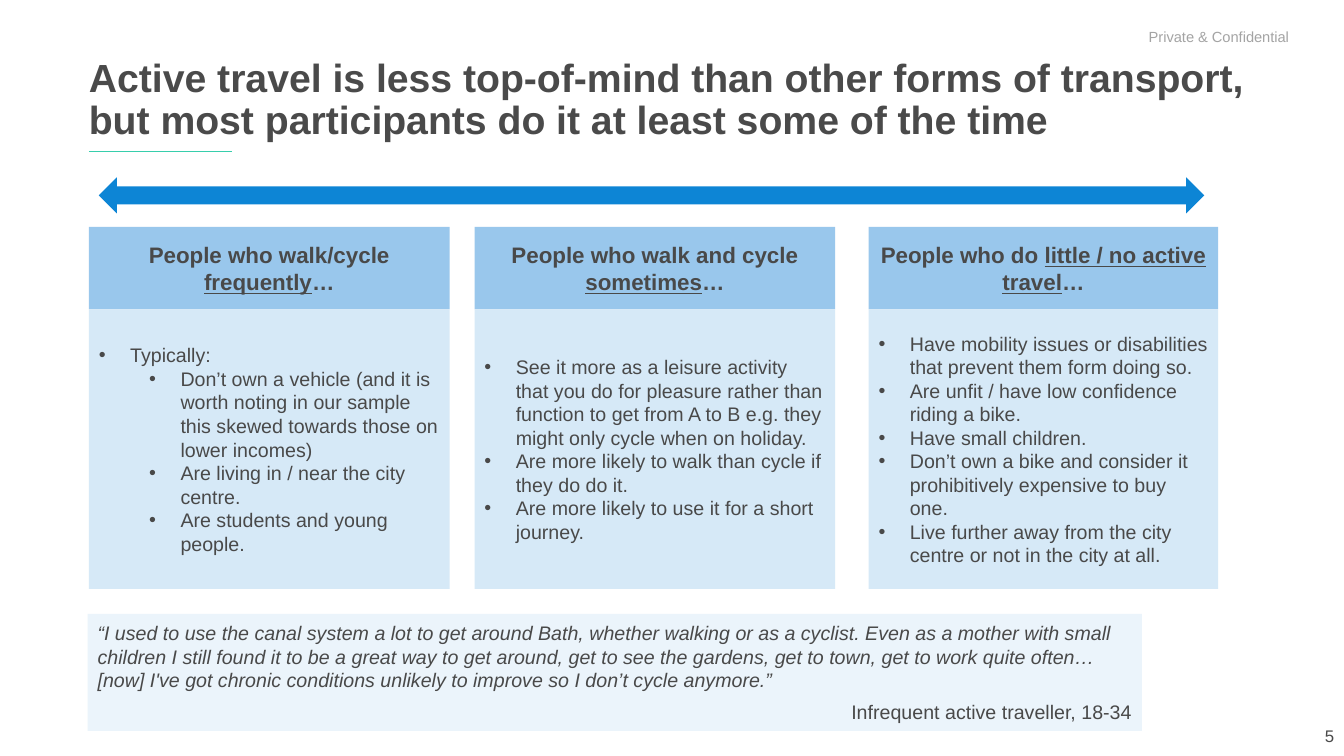
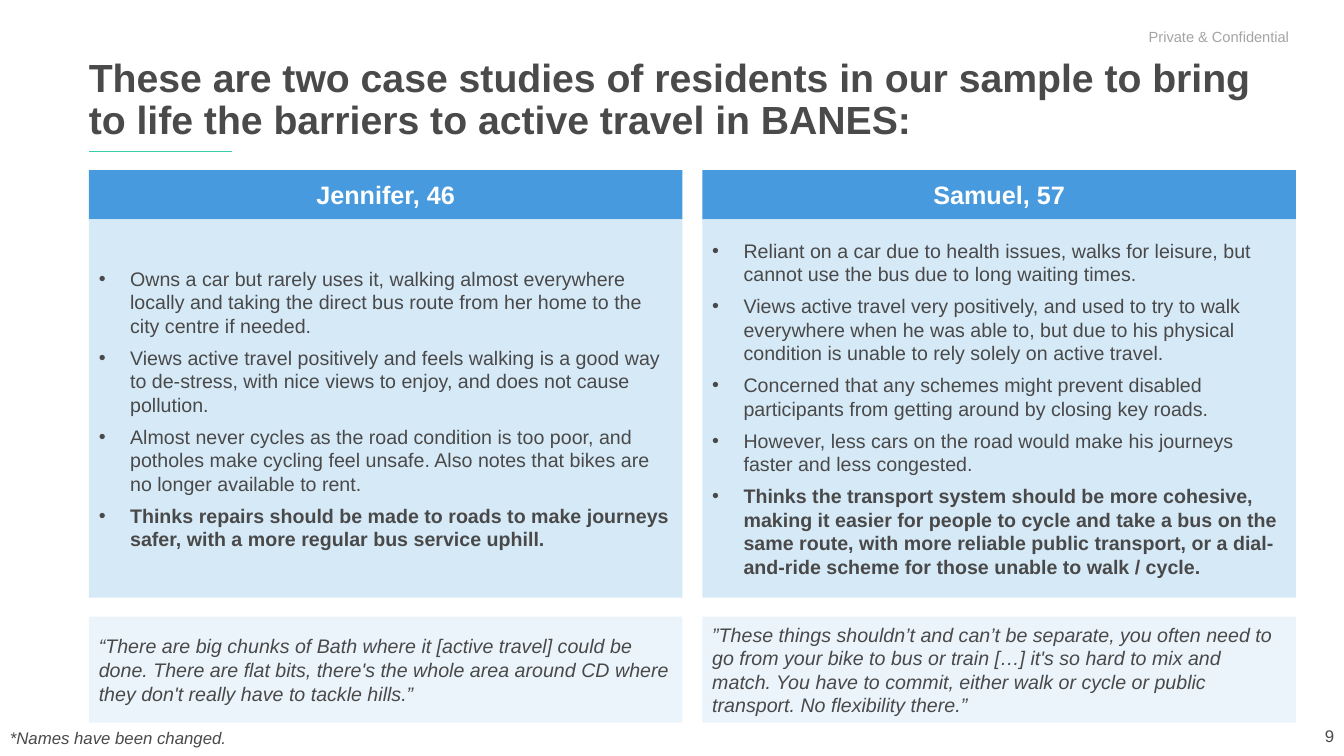
from dataclasses import dataclass

from lxml.etree import SubElement
from pptx import Presentation
from pptx.dml.color import RGBColor
from pptx.enum.shapes import MSO_CONNECTOR, MSO_SHAPE as Preset
from pptx.enum.text import MSO_ANCHOR as Anchor, PP_ALIGN as Align
from pptx.oxml.ns import qn
from pptx.util import Cm, Pt

# Shared style
FONT = "Arial"
WHITE = RGBColor(0xFF, 0xFF, 0xFF)
TITLE_GREY = RGBColor(0x4A, 0x4A, 0x4A)
TEXT_GREY = RGBColor(0x49, 0x49, 0x49)
PALE_GREY = RGBColor(0xA4, 0xA4, 0xA4)
GREEN = RGBColor(0x37, 0xCE, 0xAC)
ARROW_BLUE = RGBColor(0x0D, 0x85, 0xD5)
GROUP_BLUE = RGBColor(0x99, 0xC7, 0xEC)
CASE_BLUE = RGBColor(0x47, 0x9A, 0xDD)
BODY_BLUE = RGBColor(0xD6, 0xE9, 0xF7)
QUOTE_BLUE = RGBColor(0xEB, 0xF4, 0xFB)
MARGIN = 2.24
BULLET_HANG = 0.79
LEVEL_STEP = 1.27


@dataclass
class Box:
    """Place and size in centimetres."""
    left: float
    top: float
    width: float
    height: float

    def lengths(self) -> tuple:
        return Cm(self.left), Cm(self.top), Cm(self.width), Cm(self.height)


@dataclass
class Line:
    """One paragraph; text may continue with an underlined part and a tail."""
    text: str
    underlined: str = ""
    tail: str = ""
    size: float = 14
    color: RGBColor = TEXT_GREY
    bold: bool = False
    italic: bool = False
    align: Align = Align.LEFT
    bullet: bool = False
    level: int = 0
    before: float = 0
    after: float = 0
    spacing: float = 1.0


@dataclass
class Group:
    """A kind of traveller: header wording and bullets."""
    left: float
    width: float
    lead: str
    frequency: str
    points: list[Line]


@dataclass
class CaseStudy:
    """A resident: name, habits, a closing wish and a quote."""
    name: str
    habits: list[str]
    wish: str
    quote: str


def add_bullet(paragraph, level: int) -> None:
    props = paragraph._p.get_or_add_pPr()
    props.set("marL", str(Cm(BULLET_HANG + level * LEVEL_STEP)))
    props.set("indent", str(-Cm(BULLET_HANG)))
    SubElement(props, qn("a:buFont"), typeface=FONT)
    SubElement(props, qn("a:buChar"), char="•")


def write(frame, lines: list[Line], anchor: Anchor = Anchor.MIDDLE, wrap: bool = True) -> None:
    frame.word_wrap = wrap
    frame.vertical_anchor = anchor
    for index, line in enumerate(lines):
        paragraph = frame.add_paragraph() if index else frame.paragraphs[0]
        paragraph.alignment = line.align
        paragraph.level = line.level
        if line.bullet:
            add_bullet(paragraph, line.level)
        if index and line.before:
            paragraph.space_before = Pt(line.before)
        if line.after:
            paragraph.space_after = Pt(line.after)
        if line.spacing != 1:
            paragraph.line_spacing = line.spacing
        font = paragraph.font
        font.name, font.size = FONT, Pt(line.size)
        font.bold, font.italic = line.bold, line.italic
        font.color.rgb = line.color
        paragraph.add_run().text = line.text
        if line.underlined:
            stressed = paragraph.add_run()
            stressed.text = line.underlined
            stressed.font.underline = True
        if line.tail:
            paragraph.add_run().text = line.tail


def add_panel(slide, box: Box, fill: RGBColor, lines: list[Line], preset: Preset = Preset.RECTANGLE) -> None:
    panel = slide.shapes.add_shape(preset, *box.lengths())
    panel.shadow.inherit = False
    panel.fill.solid()
    panel.fill.fore_color.rgb = fill
    panel.line.fill.background()
    if lines:
        write(panel.text_frame, lines)


def add_label(slide, box: Box, line: Line, anchor: Anchor = Anchor.TOP, wrap: bool = True):
    frame = slide.shapes.add_textbox(*box.lengths()).text_frame
    write(frame, [line], anchor, wrap)
    return frame


def add_base_slide(deck, title: str, number: str):
    """Blank slide with page number, confidentiality mark, rule and title."""
    slide = deck.slides.add_slide(deck.slide_layouts[6])
    add_label(slide, Box(26.25, 18.03, 7.62, 1.02),
              Line(number, size=12, color=TITLE_GREY, align=Align.RIGHT), Anchor.MIDDLE)
    add_panel(slide, Box(28.7, 0.48, 4.14, 0.89), WHITE,
              [Line("Private & Confidential", size=10.5, color=PALE_GREY)])
    rule = slide.shapes.add_connector(MSO_CONNECTOR.STRAIGHT, Cm(MARGIN), Cm(3.81), Cm(5.84), Cm(3.81))
    rule.line.color.rgb = GREEN
    rule.line.width = Pt(1)
    SubElement(rule._element.spPr, qn("a:effectLst"))
    heading = add_label(slide, Box(MARGIN, 1.35, 29.72, 2.21),
                        Line(title, size=28, color=TITLE_GREY, bold=True, spacing=0.9))
    heading.margin_left = 0
    return slide


# Content
def point(text: str, level: int = 0) -> Line:
    return Line(text, bullet=True, level=level)


GROUPS = [
    Group(MARGIN, 9.09, "People who walk/cycle ", "frequently", [
        point("Typically:"),
        point("Don’t own a vehicle (and it is worth noting in our sample this skewed "
              "towards those on lower incomes)", 1),
        point("Are living in / near the city centre.", 1),
        point("Are students and young people.", 1),
    ]),
    Group(11.96, 9.09, "People who walk and cycle ", "sometimes", [
        point("See it more as a leisure activity that you do for pleasure rather than function "
              "to get from A to B e.g. they might only cycle when on holiday."),
        point("Are more likely to walk than cycle if they do do it."),
        point("Are more likely to use it for a short journey."),
    ]),
    Group(21.89, 8.81, "People who do ", "little / no active travel", [
        point("Have mobility issues or disabilities that prevent them form doing so."),
        point("Are unfit / have low confidence riding a bike."),
        point("Have small children."),
        point("Don’t own a bike and consider it prohibitively expensive to buy one."),
        point("Live further away from the city centre or not in the city at all."),
    ]),
]

CASE_STUDIES = [
    CaseStudy(
        "Jennifer, 46",
        ["Owns a car but rarely uses it, walking almost everywhere locally and taking the direct "
         "bus route from her home to the city centre if needed.",
         "Views active travel positively and feels walking is a good way to de-stress, with nice "
         "views to enjoy, and does not cause pollution.",
         "Almost never cycles as the road condition is too poor, and potholes make cycling feel "
         "unsafe. Also notes that bikes are no longer available to rent."],
        "Thinks repairs should be made to roads to make journeys safer, with a more regular bus "
        "service uphill.",
        "“There are big chunks of Bath where it [active travel] could be done. There are flat bits, "
        "there's the whole area around CD where they don't really have to tackle hills.”"),
    CaseStudy(
        "Samuel, 57",
        ["Reliant on a car due to health issues, walks for leisure, but cannot use the bus due to "
         "long waiting times.",
         "Views active travel very positively, and used to try to walk everywhere when he was able "
         "to, but due to his physical condition is unable to rely solely on active travel.",
         "Concerned that any schemes might prevent disabled participants from getting around by "
         "closing key roads.",
         "However, less cars on the road would make his journeys faster and less congested."],
        "Thinks the transport system should be more cohesive, making it easier for people to cycle "
        "and take a bus on the same route, with more reliable public transport, or a dial-and-ride "
        "scheme for those unable to walk / cycle.",
        "”These things shouldn’t and can’t be separate, you often need to go from your bike to bus "
        "or train […] it's so hard to mix and match. You have to commit, either walk or cycle or "
        "public transport. No flexibility there.”"),
]


def build_groups_slide(deck) -> None:
    slide = add_base_slide(deck, "Active travel is less top-of-mind than other forms of transport, "
                                 "but most participants do it at least some of the time", "5")
    add_panel(slide, Box(2.49, 4.47, 27.86, 0.91), ARROW_BLUE, [], Preset.LEFT_RIGHT_ARROW)

    # Columns from frequent to rare travellers
    for group in GROUPS:
        header = Line(group.lead, group.frequency, "…", size=16, bold=True, align=Align.CENTER)
        add_panel(slide, Box(group.left, 5.72, group.width, 2.08), GROUP_BLUE, [header])
        add_panel(slide, Box(group.left, 7.8, group.width, 7.04), BODY_BLUE, group.points)

    # Quote and speaker
    add_panel(slide, Box(2.21, 15.47, 26.57, 2.95), QUOTE_BLUE, [
        Line("“I used to use the canal system a lot to get around Bath, whether walking or as a "
             "cyclist. Even as a mother with small children I still found it to be a great way to "
             "get around, get to see the gardens, get to town, get to work quite often… [now] I've "
             "got chronic conditions unlikely to improve so I don’t cycle anymore.”",
             italic=True, after=6),
        Line("Infrequent active traveller, 18-34", align=Align.RIGHT),
    ])


def build_cases_slide(deck) -> None:
    slide = add_base_slide(deck, "These are two case studies of residents in our sample to bring "
                                 "to life the barriers to active travel in BANES:", "9")
    width, gap = 14.96, 0.5

    # One column per resident
    for index, case in enumerate(CASE_STUDIES):
        left = MARGIN + index * (width + gap)
        name = Line(case.name, size=18, color=WHITE, bold=True, align=Align.CENTER)
        story = [Line(habit, bullet=True, before=6) for habit in case.habits]
        story.append(Line(case.wish, bullet=True, before=6, bold=True))
        add_panel(slide, Box(left, 4.29, width, 1.24), CASE_BLUE, [name])
        add_panel(slide, Box(left, 5.53, width, 9.53), BODY_BLUE, story)
        add_panel(slide, Box(left, 15.54, width, 2.67), QUOTE_BLUE, [Line(case.quote, italic=True)])

    # Footnote
    add_label(slide, Box(0, 18.21, 5.99, 0.76),
              Line("*Names have been changed.", size=12, italic=True), wrap=False)


def main() -> None:
    deck = Presentation()
    deck.slide_width, deck.slide_height = Cm(33.87), Cm(19.05)
    build_groups_slide(deck)
    build_cases_slide(deck)
    deck.save("out.pptx")


if __name__ == "__main__":
    main()
